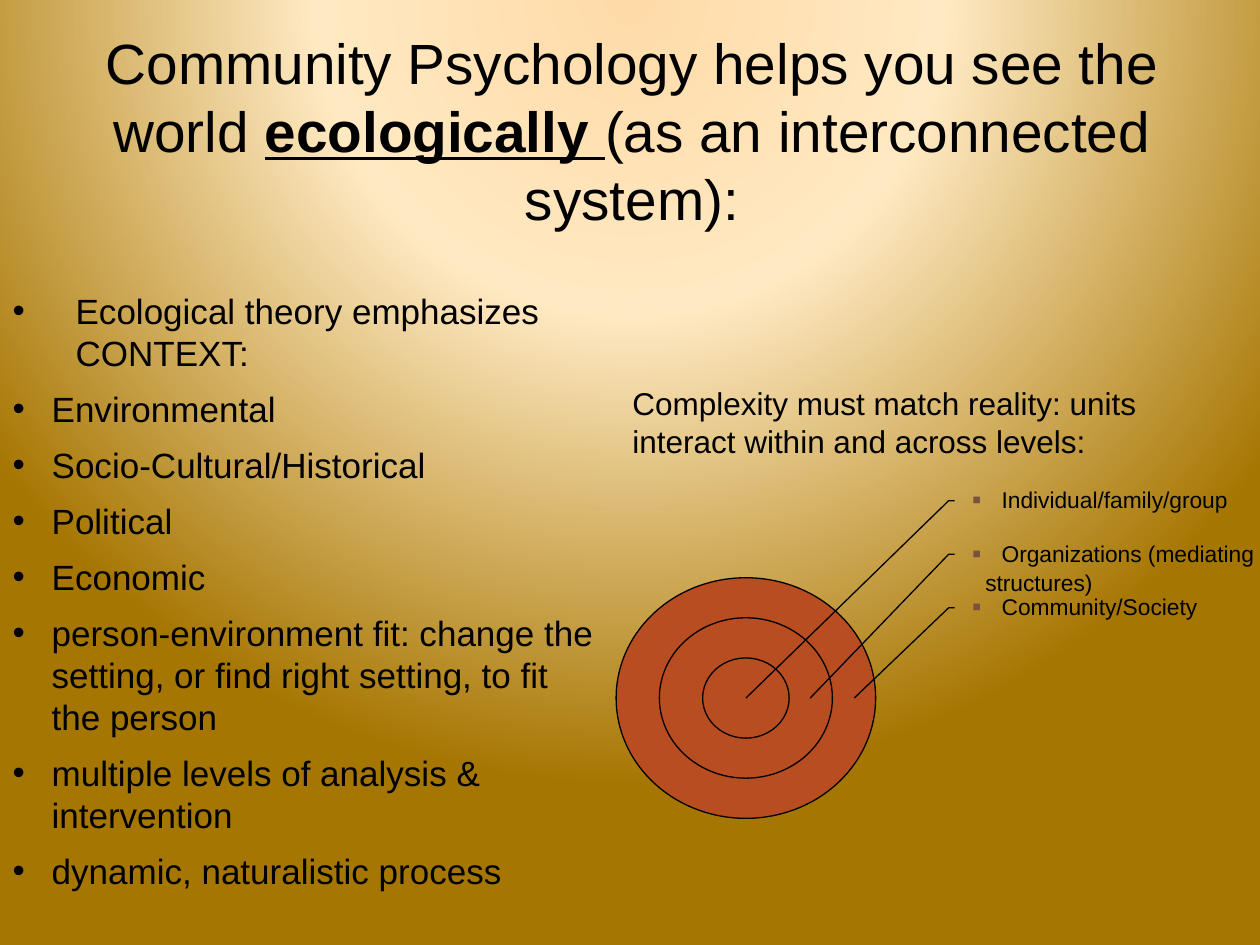
from dataclasses import dataclass

import pptx
import pptx.dml.color
import pptx.enum.shapes
import pptx.enum.text
import pptx.oxml
import pptx.oxml.ns
import pptx.util
from pptx.util import Inches, Pt


@dataclass(frozen=True)
class Theme:
    font: str = "Arial"
    ink: str = "000000"
    ring: str = "B74D21"
    marker: str = "785140"
    gradient: tuple = ((0, "FFDBA9"), (40, "FFE9C2"), (100, "A67602"))
    title_size: float = 32.4
    body_size: float = 20
    caption_size: float = 18
    label_size: float = 13
    line_width: float = 0.75


@dataclass(frozen=True)
class Level:
    """One ring, counted from the centre, and the label pointing into it."""
    rank: int
    pointer_shift: float
    lines: tuple


THEME = Theme()
CENTER_X, CENTER_Y = 5.92, 5.54
RING_WIDTH, RING_HEIGHT = 2.06, 1.91
LABEL_LEFT, LABEL_TOP, LABEL_WIDTH, LABEL_HEIGHT = 7.66, 3.85, 0.55, 0.42
LABEL_PITCH = 0.425

LEVELS = (
    Level(3, 0.86, ("Community/Society",)),
    Level(2, 0.51, ("Organizations (mediating", "structures)")),
    Level(1, 0, ("Individual/family/group",)),
)
TITLE_RUNS = (
    ("Community Psychology helps you see the world ", False),
    ("ecologically ", True),
    ("(as an interconnected system):", False),
)
POINTS = (
    "Ecological theory emphasizes CONTEXT:",
    "Environmental",
    "Socio-Cultural/Historical",
    "Political",
    "Economic",
    "person-environment fit: change the setting, or find right setting, to fit the person",
    "multiple levels of analysis & intervention",
    "dynamic, naturalistic process",
)


def rgb(code: str) -> pptx.dml.color.RGBColor:
    return pptx.dml.color.RGBColor.from_string(code)


def place(shape, left: float, top: float, width: float, height: float) -> None:
    shape.left, shape.top = Inches(left), Inches(top)
    shape.width, shape.height = Inches(width), Inches(height)


def add_run(para, text: str, size: float, strong: bool = False) -> None:
    span = para.add_run()
    span.text = text
    span.font.name = THEME.font
    span.font.size = Pt(size)
    span.font.color.rgb = rgb(THEME.ink)
    span.font.bold = span.font.underline = strong


def set_indent(para, margin: float, first_line: float = 0) -> None:
    properties = para._p.get_or_add_pPr()
    properties.set("marL", str(Inches(margin)))
    properties.set("indent", str(Inches(first_line)))


def add_bullet(para, char: str, hang: float, color: str, percent: int) -> None:
    set_indent(para, hang, -hang)
    properties = para._p.get_or_add_pPr()
    namespace = pptx.oxml.ns.nsdecls("a")
    for xml in (
        f'<a:buClr {namespace}><a:srgbClr val="{color}"/></a:buClr>',
        f'<a:buSzPct {namespace} val="{percent * 1000}"/>',
        f'<a:buFont {namespace} typeface="{THEME.font}"/>',
        f'<a:buChar {namespace} char="{char}"/>',
    ):
        properties.append(pptx.oxml.parse_xml(xml))


def paint_background(page) -> None:
    """Radial gradient centred above the top edge of the page."""
    stops = "".join(
        f'<a:gs pos="{position * 1000}"><a:srgbClr val="{color}"/></a:gs>'
        for position, color in THEME.gradient
    )
    page.element.cSld.insert(0, pptx.oxml.parse_xml(
        f'<p:bg {pptx.oxml.ns.nsdecls("p", "a")}><p:bgPr>'
        f'<a:gradFill rotWithShape="1"><a:gsLst>{stops}</a:gsLst><a:path path="circle">'
        '<a:fillToRect l="50000" t="-80000" r="50000" b="180000"/></a:path></a:gradFill>'
        '<a:effectLst/></p:bgPr></p:bg>'
    ))


def fill_title(box) -> None:
    place(box, 0.25, 0.23, 9.53, 1.6)
    frame = box.text_frame
    frame.auto_size = pptx.enum.text.MSO_AUTO_SIZE.NONE
    frame.vertical_anchor = pptx.enum.text.MSO_ANCHOR.MIDDLE
    para = frame.paragraphs[0]
    para.alignment = pptx.enum.text.PP_ALIGN.CENTER
    for text, strong in TITLE_RUNS:
        add_run(para, text, THEME.title_size, strong)


def fill_points(box) -> None:
    place(box, 0, 2.25, 4.89, 5)
    frame = box.text_frame
    frame.auto_size = pptx.enum.text.MSO_AUTO_SIZE.NONE
    for index, text in enumerate(POINTS):
        para = frame.add_paragraph() if index else frame.paragraphs[0]
        add_bullet(para, "•", 0.31 if index else 0.5, THEME.ink, 100)
        para.space_before, para.space_after = Pt(0), Pt(8)
        add_run(para, text, THEME.body_size)


def add_outlined(shapes, kind, left: float, top: float, width: float, height: float):
    shape = shapes.add_shape(
        kind, Inches(left), Inches(top), Inches(width), Inches(height))
    shape.shadow.inherit = False
    shape.line.color.rgb = rgb(THEME.ink)
    shape.line.width = Pt(THEME.line_width)
    return shape


def add_ring(shapes, level: Level) -> None:
    width, height = (size * level.rank / 3 for size in (RING_WIDTH, RING_HEIGHT))
    ring = add_outlined(shapes, pptx.enum.shapes.MSO_SHAPE.OVAL,
                        CENTER_X - width / 2, CENTER_Y - height / 2, width, height)
    ring.fill.solid()
    ring.fill.fore_color.rgb = rgb(THEME.ring)


def add_label(shapes, level: Level) -> None:
    """Callout whose bent line ends inside its ring."""
    top = LABEL_TOP + (level.rank - 1) * LABEL_PITCH
    label = add_outlined(shapes, pptx.enum.shapes.MSO_SHAPE.LINE_CALLOUT_2_NO_BORDER,
                         LABEL_LEFT, top, LABEL_WIDTH, LABEL_HEIGHT)
    label.fill.background()
    target_x = (CENTER_X + level.pointer_shift - LABEL_LEFT) / LABEL_WIDTH
    target_y = (CENTER_Y - top) / LABEL_HEIGHT
    for index, value in enumerate((0.295, -0.152, 0.295, -0.238, target_y, target_x)):
        label.adjustments[index] = value

    frame = label.text_frame
    frame.word_wrap = False
    frame.vertical_anchor = pptx.enum.text.MSO_ANCHOR.TOP
    frame.margin_left = frame.margin_right = Inches(0.06)
    frame.margin_top = frame.margin_bottom = Inches(0.03)
    for index, text in enumerate(level.lines):
        para = frame.add_paragraph() if index else frame.paragraphs[0]
        if index:
            set_indent(para, 0.1)
            para.space_before = Pt(2.6)
        else:
            add_bullet(para, "■", 0.23, THEME.marker, 60)
        para.alignment = pptx.enum.text.PP_ALIGN.LEFT
        para.line_spacing = 0.9
        add_run(para, text, THEME.label_size)


def add_caption(page) -> None:
    box = page.shapes.add_textbox(Inches(4.92), Inches(3), Inches(4.75), Inches(0.7))
    box.text_frame.word_wrap = True
    add_run(box.text_frame.paragraphs[0],
            "Complexity must match reality: units interact within and across levels:",
            THEME.caption_size)


def main() -> None:
    deck = pptx.Presentation()
    deck.slide_width, deck.slide_height = Inches(10), Inches(7.5)
    page = deck.slides.add_slide(deck.slide_layouts[1])
    paint_background(page)
    fill_title(page.shapes.title)
    fill_points(page.placeholders[1])
    diagram = page.shapes.add_group_shape()
    for level in LEVELS:
        add_ring(diagram.shapes, level)
        add_label(diagram.shapes, level)
    add_caption(page)
    deck.save("out.pptx")


if __name__ == "__main__":
    main()
